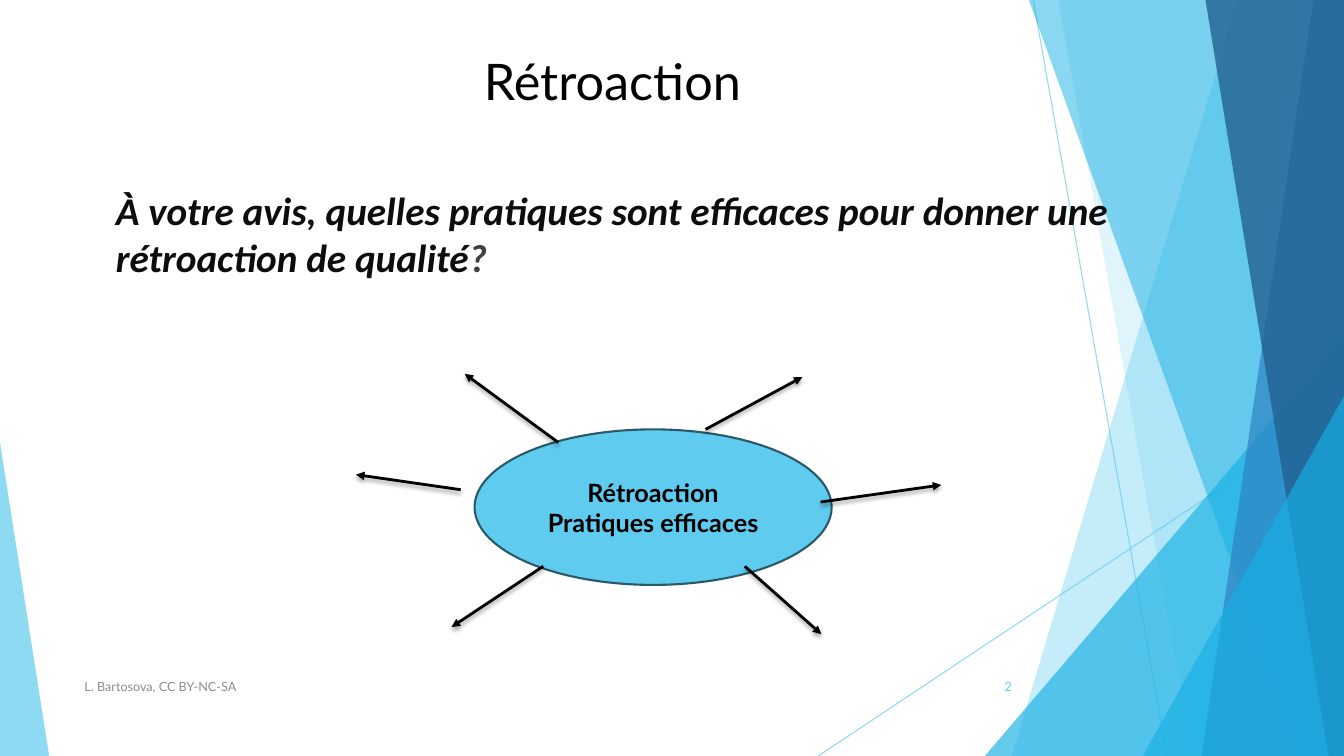
from dataclasses import dataclass

from lxml.etree import SubElement
from pptx import Presentation
from pptx.dml.color import RGBColor
from pptx.enum.shapes import MSO_CONNECTOR, MSO_SHAPE
from pptx.enum.text import MSO_ANCHOR, PP_ALIGN
from pptx.oxml.ns import qn
from pptx.util import Cm, Pt

WIDTH, HEIGHT = 33.87, 19.05

COLORS = {
    "black": "000000",
    "ink": "0D0D0D",
    "dark_grey": "404040",
    "grey": "8C8C8C",
    "sky": "5FCBEF",
    "cyan": "17B0E4",
    "blue": "2E83C3",
    "navy": "226292",
    "outline": "2A5969",
}


@dataclass
class Line:
    x1: float
    y1: float
    x2: float
    y2: float


@dataclass
class Band:
    """Full-height facet reaching from a slanted left side to the right edge."""
    top_x: float
    bottom_x: float
    color: str
    opacity: int


@dataclass
class Corner:
    """Right triangle resting on the bottom edge, with its apex at one end."""
    left: float
    top: float
    width: float
    apex: int
    color: str
    opacity: int


@dataclass
class Run:
    text: str
    size: int
    color: str
    font: str = "Lato"
    bold: bool = False
    italic: bool = False


HAIRLINES = [Line(26.04, 0, 29.41, HEIGHT), Line(WIDTH, 10.24, 20.62, HEIGHT)]

FACETS = [
    Band(31.19, 25.5, "sky", 36),
    Band(26.67, 30.05, "sky", 20),
    Corner(24.82, 8.46, 9.05, 1, "cyan", 66),
    Band(25.93, 32.79, "cyan", 50),
    Band(33.1, 30.28, "blue", 70),
    Band(30.38, 33.48, "navy", 80),
    Corner(28.8, 9.98, 5.07, 1, "cyan", 66),
    Corner(0, 11.15, 1.24, 0, "sky", 70),
]

ARROWS = [
    Line(17.78, 10.82, 20.22, 9.5),
    Line(18.77, 14.27, 20.7, 15.98),
    Line(14.07, 11.15, 11.71, 9.42),
    Line(13.69, 14.27, 11.38, 15.8),
    Line(11.61, 12.34, 8.97, 11.96),
    Line(20.68, 12.65, 23.72, 12.22),
]


def rgb(name: str) -> RGBColor:
    return RGBColor.from_string(COLORS[name])


def set_opacity(shape, percent: int) -> None:
    color = next(shape._element.iter(qn("a:srgbClr")))
    SubElement(color, qn("a:alpha"), val=str(percent * 1000))


def add_line(slide, line: Line, color: str, width: float):
    cx = slide.shapes.add_connector(
        MSO_CONNECTOR.STRAIGHT, Cm(line.x1), Cm(line.y1), Cm(line.x2), Cm(line.y2))
    cx.line.color.rgb = rgb(color)
    cx.line.width = Pt(width)
    SubElement(cx._element.spPr, qn("a:effectLst"))
    return cx


def add_facet(slide, facet: Band | Corner) -> None:
    if isinstance(facet, Band):
        builder = slide.shapes.build_freeform(Cm(facet.top_x), 0)
        builder.add_line_segments([
            (Cm(WIDTH), 0), (Cm(WIDTH), Cm(HEIGHT)), (Cm(facet.bottom_x), Cm(HEIGHT))])
        sp = builder.convert_to_shape()
    else:
        sp = slide.shapes.add_shape(
            MSO_SHAPE.ISOSCELES_TRIANGLE, Cm(facet.left), Cm(facet.top),
            Cm(facet.width), Cm(HEIGHT - facet.top))
        sp.adjustments[0] = facet.apex
    sp.shadow.inherit = False
    sp.fill.solid()
    sp.fill.fore_color.rgb = rgb(facet.color)
    sp.line.fill.background()
    set_opacity(sp, facet.opacity)


def add_arrow(slide, line: Line) -> None:
    """Draw a black arrow with a soft shadow below it."""
    cx = add_line(slide, line, "black", 2)
    SubElement(cx.line._get_or_add_ln(), qn("a:tailEnd"), type="triangle")
    effects = cx._element.spPr.find(qn("a:effectLst"))
    shadow = SubElement(effects, qn("a:outerShdw"), blurRad=str(Pt(3)),
                        dist=str(Pt(2)), dir="5400000", rotWithShape="0")
    color = SubElement(shadow, qn("a:srgbClr"), val=COLORS["black"])
    SubElement(color, qn("a:alpha"), val="35000")


def write(shape, paragraphs: list[list[Run]], align=PP_ALIGN.LEFT,
          anchor=MSO_ANCHOR.MIDDLE) -> None:
    tf = shape.text_frame
    tf.word_wrap = True
    tf.vertical_anchor = anchor
    for i, runs in enumerate(paragraphs):
        p = tf.add_paragraph() if i else tf.paragraphs[0]
        p.alignment = align
        for run in runs:
            r = p.add_run()
            r.text = run.text
            r.font.color.rgb = rgb(run.color)
            formats = {"name": run.font, "size": Pt(run.size),
                       "bold": run.bold, "italic": run.italic}
            for key, value in formats.items():
                setattr(r.font, key, value)


def add_text(slide, left: float, top: float, width: float, height: float,
             runs: list[Run], **layout):
    sp = slide.shapes.add_textbox(Cm(left), Cm(top), Cm(width), Cm(height))
    write(sp, [runs], **layout)
    return sp


def add_hub(slide) -> None:
    sp = slide.shapes.add_shape(
        MSO_SHAPE.OVAL, Cm(11.96), Cm(10.82), Cm(9), Cm(3.92))
    sp.shadow.inherit = False
    sp.fill.solid()
    sp.fill.fore_color.rgb = rgb("sky")
    sp.line.color.rgb = rgb("outline")
    sp.line.width = Pt(1.5)
    labels = ["Rétroaction", "Pratiques efficaces"]
    write(sp, [[Run(label, 18, "black", bold=True)] for label in labels],
          align=PP_ALIGN.CENTER)


def main() -> None:
    prs = Presentation()
    prs.slide_width, prs.slide_height = Cm(WIDTH), Cm(HEIGHT)
    slide = prs.slides.add_slide(prs.slide_layouts[5])

    for line in HAIRLINES:
        set_opacity(add_line(slide, line, "sky", 0.75), 70)
    for facet in FACETS:
        add_facet(slide, facet)

    title = slide.shapes.title
    frame = {"left": -0.58, "top": 1.14, "width": 32.03, "height": 2.39}
    for key, value in frame.items():
        setattr(title, key, Cm(value))
    write(title, [[Run("Rétroaction", 36, "black")]],
          align=PP_ALIGN.CENTER, anchor=MSO_ANCHOR.TOP)

    emphasis = {"font": "Calibri", "bold": True, "italic": True}
    question = add_text(slide, 2.67, 3.76, 28.78, 10.41, [
        Run("À votre avis, quelles pratiques sont efficaces pour donner une "
            "rétroaction de qualité", 28, "ink", **emphasis),
        Run("?", 28, "dark_grey", **emphasis),
    ], anchor=MSO_ANCHOR.TOP)
    question.text_frame.margin_top = Cm(0.94)

    add_hub(slide)
    for line in ARROWS:
        add_arrow(slide, line)

    add_text(slide, 23.85, 16.79, 1.9, 1.02, [Run("2", 9, "sky")],
             align=PP_ALIGN.RIGHT)
    add_text(slide, 1.88, 16.79, 17.5, 1.02,
             [Run("L. Bartosova, CC BY-NC-SA", 9, "grey")])
    prs.save("out.pptx")


if __name__ == "__main__":
    main()
